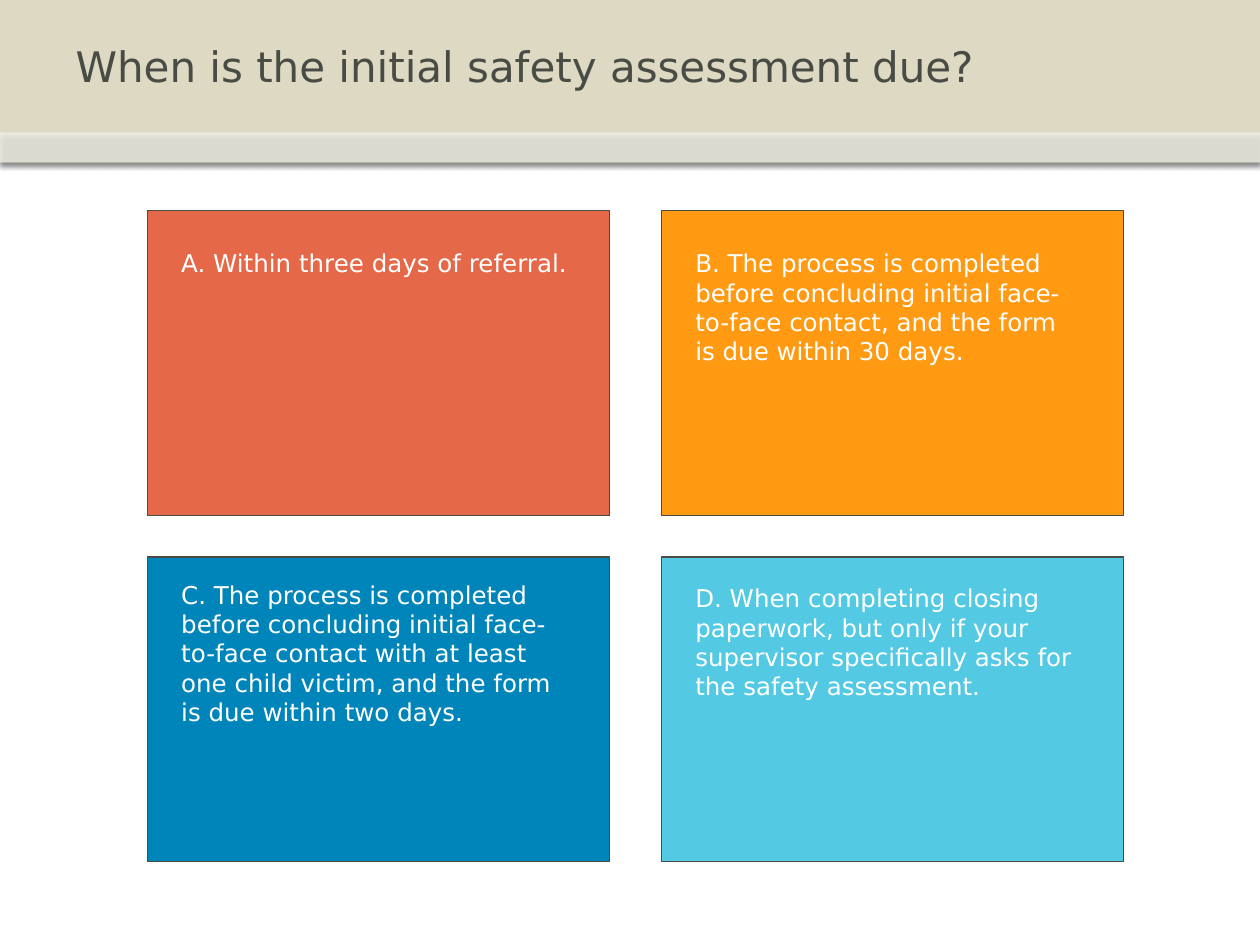
from dataclasses import dataclass

from lxml import etree
from pptx import Presentation
from pptx.dml.color import RGBColor
from pptx.enum import shapes, text
from pptx.oxml.ns import qn
from pptx.util import Inches, Pt


@dataclass(frozen=True)
class Theme:
    font: str = "DejaVu Sans"
    ink: str = "484C45"
    white: str = "FFFFFF"
    sand: str = "DDD9C3"
    red: str = "E56849"
    orange: str = "FF9A12"
    blue: str = "0085BA"
    sky: str = "53C9E4"
    head: int = 24
    body: int = 14
    line: float = 0.75


def add(parent, tag, **attrs):
    return etree.SubElement(parent, qn(tag), attrs)


class Deck:
    """Holds the theme and the slide being drawn."""

    def __init__(self, theme):
        self.theme = theme
        self.show = Presentation()
        self.show.slide_width, self.show.slide_height = Inches(10), Inches(7.5)
        self.slide = self.show.slides.add_slide(self.show.slide_layouts[5])

    def style(self, para, size, color):
        para.alignment = text.PP_ALIGN.LEFT
        para.font.name = self.theme.font
        para.font.size = Pt(size)
        para.font.color.rgb = RGBColor.from_string(color)

    def rect(self, box, fill):
        shape = self.slide.shapes.add_shape(
            shapes.MSO_SHAPE.RECTANGLE, *map(Inches, box))
        shape.shadow.inherit = False
        shape.fill.solid()
        shape.fill.fore_color.rgb = RGBColor.from_string(fill)
        shape.line.fill.background()
        return shape

    def band(self, top, height, fill, alpha=100):
        """Draw a full-width header band with a soft shadow below it."""
        shape = self.rect((0, top, 10, height), fill)
        props = shape._element.spPr
        color = props.find(qn("a:solidFill"))[0]
        add(color, "a:alpha", val=str(alpha * 1000))
        glow = add(props.find(qn("a:effectLst")), "a:outerShdw",
                   blurRad=str(Pt(3.1)), dist=str(Pt(1.8)),
                   dir=str(90 * 60000), rotWithShape="0")
        add(add(glow, "a:srgbClr", val="000000"), "a:alpha", val="35000")

    def title(self, words, box):
        shape = self.slide.shapes.title
        shape.left, shape.top, shape.width, shape.height = map(Inches, box)
        frame = shape.text_frame
        frame.text = words
        frame.auto_size = text.MSO_AUTO_SIZE.NONE
        frame.vertical_anchor = text.MSO_ANCHOR.MIDDLE
        self.style(frame.paragraphs[0], self.theme.head, self.theme.ink)
        self.slide.shapes._spTree.append(shape._element)  # above the bands

    def card(self, box, fill):
        shape = self.rect(box, fill)
        shape.line.color.rgb = RGBColor.from_string(self.theme.ink)
        shape.line.width = Pt(self.theme.line)

    def label(self, words, box):
        shape = self.slide.shapes.add_textbox(*map(Inches, box))
        frame = shape.text_frame
        frame.word_wrap = True
        frame.auto_size = text.MSO_AUTO_SIZE.SHAPE_TO_FIT_TEXT
        frame.text = words
        self.style(frame.paragraphs[0], self.theme.body, self.theme.white)


def main():
    look = Theme()
    deck = Deck(look)
    deck.band(0, 1.29, look.sand)
    deck.band(1.05, 0.24, look.white, 53)
    deck.title("When is the initial safety assessment due?", (0.5, 0, 9, 1.05))

    # answer, card colour, text drop below card top, text width and height
    answers = [
        ("A. Within three days of referral.", look.red, 0.25, 3.5, 0.34),
        ("B. The process is completed before concluding initial face-to-face "
         "contact, and the form is due within 30 days.",
         look.orange, 0.25, 3.17, 1.04),
        ("C. The process is completed before concluding initial face-to-face "
         "contact with at least one child victim, and the form is due within "
         "two days.", look.blue, 0.13, 3.33, 1.28),
        ("D. When completing closing paperwork, but only if your supervisor "
         "specifically asks for the safety assessment.",
         look.sky, 0.16, 3.33, 1.04),
    ]
    for i, (words, fill, drop, wide, high) in enumerate(answers):
        row, col = divmod(i, 2)
        left, top = 1.17 + col * 4.08, 1.67 + row * 2.75
        deck.card((left, top, 3.67, 2.42), fill)
        deck.label(words, (left + 0.17, top + drop, wide, high))
    deck.show.save("out.pptx")


if __name__ == "__main__":
    main()
